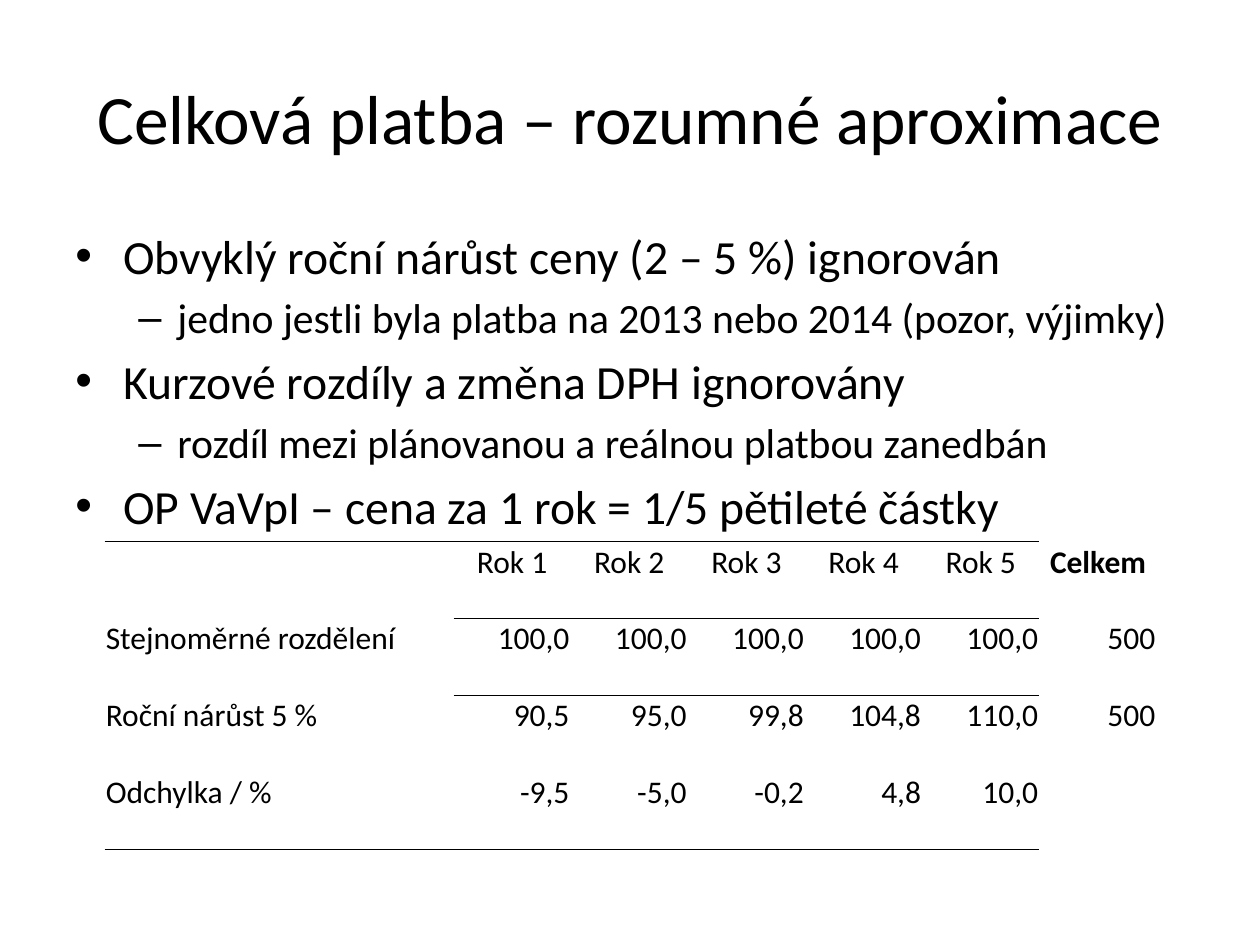
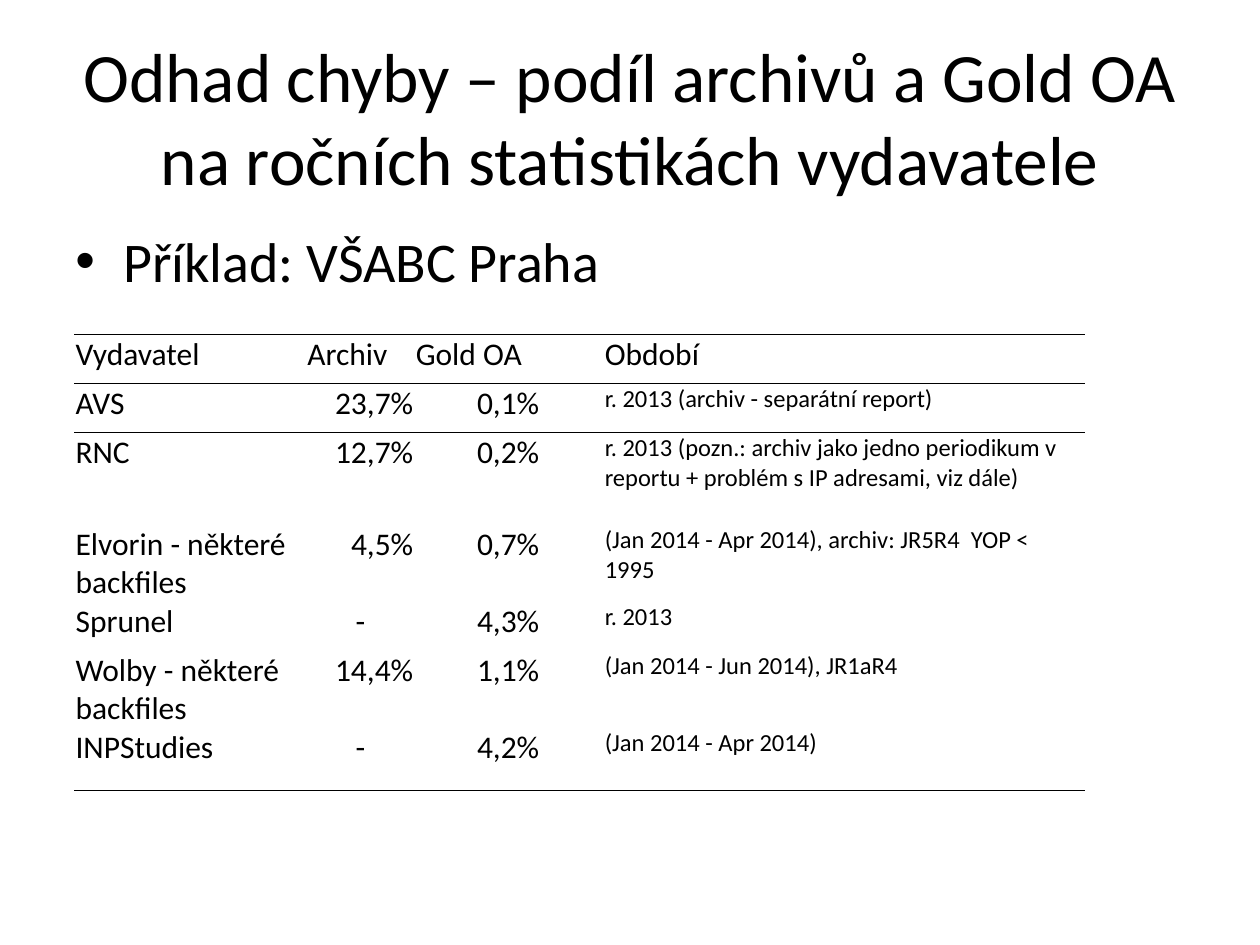
from lxml.etree import SubElement
from pptx import Presentation
from pptx.dml.color import RGBColor
from pptx.enum.text import MSO_ANCHOR, MSO_AUTO_SIZE, PP_ALIGN
from pptx.oxml import parse_xml
from pptx.oxml.ns import nsdecls, qn
from pptx.util import Inches, Pt

BLACK = RGBColor(0, 0, 0)
FONT = "Calibri"
WIDTH, HEIGHT = 10, 7.5
MARGIN = WIDTH / 20
CONTENT_WIDTH = WIDTH - 2 * MARGIN
TITLE_TOP, TITLE_HEIGHT = 0.3, HEIGHT / 6
BODY_TOP = 1.75
CELL_INSET = 0.01
RULE_WIDTH = 0.5
NUMBER_CHARACTERS = "-0123456789,%"
NO_GRID_STYLE = "{2D5ABB26-0587-4C30-8999-92F81FD0307C}"
BULLETS = [("•", 0.38, 0.38), ("–", 0.81, 0.31)]

SLIDES = [
    {
        "title": "Celková platba – rozumné aproximace",
        "body_height": 2.31,
        "bullet_sizes": (27.2, 23.8),
        "bullets": [
            (0, "Obvyklý roční nárůst ceny (2 – 5 %) ignorován"),
            (1, "jedno jestli byla platba na 2013 nebo 2014 (pozor, výjimky)"),
            (0, "Kurzové rozdíly a změna DPH ignorovány"),
            (1, "rozdíl mezi plánovanou a reálnou platbou zanedbán"),
            (0, "OP VaVpI – cena za 1 rok = 1/5 pětileté částky"),
        ],
        "table": {
            "corner": (0.83, 4.3),
            "columns": [2.77] + [0.93] * 6,
            "heights": [0.61] * 4,
            "header_align": PP_ALIGN.CENTER,
            "bold": {"Celkem"},
            "note_column": None,
            "rules": {0: range(6), 1: range(1, 6), 4: range(6)},
            "rows": [
                ("", "Rok 1", "Rok 2", "Rok 3", "Rok 4", "Rok 5", "Celkem"),
                ("Stejnoměrné rozdělení", "100,0", "100,0", "100,0", "100,0", "100,0", "500"),
                ("Roční nárůst 5 %", "90,5", "95,0", "99,8", "104,8", "110,0", "500"),
                ("Odchylka / %", "-9,5", "-5,0", "-0,2", "4,8", "10,0", ""),
            ],
        },
    },
    {
        "title": "Odhad chyby – podíl archivů a Gold OA na ročních statistikách vydavatele",
        "body_height": 4.95,
        "bullet_sizes": (32, 28),
        "bullets": [(0, "Příklad: VŠABC Praha")],
        "table": {
            "corner": (0.59, 2.65),
            "columns": [1.84, 0.86, 1, 4.32],
            "heights": [0.39, 0.39, 0.73, 0.39, 0.39, 0.39, 0.5],
            "header_align": PP_ALIGN.LEFT,
            "bold": set(),
            "note_column": 3,
            "rules": {0: range(4), 1: range(4), 7: range(4)},
            "rows": [
                ("Vydavatel", "Archiv", "Gold OA", "Období"),
                ("AVS", "23,7%", "0,1%", "r. 2013 (archiv - separátní report)"),
                ("RNC", "12,7%", "0,2%",
                 "r. 2013 (pozn.: archiv jako jedno periodikum v reportu"
                 " + problém s IP adresami, viz dále)"),
                ("Elvorin - některé backfiles", "4,5%", "0,7%",
                 "(Jan 2014 - Apr 2014), archiv: JR5R4  YOP < 1995"),
                ("Sprunel", "-", "4,3%", "r. 2013"),
                ("Wolby - některé backfiles", "14,4%", "1,1%", "(Jan 2014 - Jun 2014), JR1aR4"),
                ("INPStudies", "-", "4,2%", "(Jan 2014 - Apr 2014)"),
            ],
        },
    },
]


def write(para, text, size=18, bold=False, align=PP_ALIGN.LEFT, level=0,
          left=0, hanging=0, bullet=None, space_before=0):
    para.alignment = align
    para.level = level
    para.space_before = Pt(space_before)
    properties = para._p.get_or_add_pPr()
    properties.set("marL", str(Inches(left)))
    properties.set("indent", str(-Inches(hanging)))
    if bullet:
        SubElement(properties, qn("a:buFont")).set("typeface", "Arial")
        SubElement(properties, qn("a:buChar")).set("char", bullet)
    span = para.add_run()
    span.text = text
    span.font.name = FONT
    span.font.size = Pt(size)
    span.font.bold = bold
    span.font.color.rgb = BLACK


def add_title(page, text):
    title = page.shapes.title
    title.left, title.top = Inches(MARGIN), Inches(TITLE_TOP)
    title.width, title.height = Inches(CONTENT_WIDTH), Inches(TITLE_HEIGHT)
    frame = title.text_frame
    frame.vertical_anchor = MSO_ANCHOR.MIDDLE
    frame.auto_size = MSO_AUTO_SIZE.NONE
    write(frame.paragraphs[0], text, size=39.6, align=PP_ALIGN.CENTER)


def add_bullets(page, bullets, sizes, height):
    box = page.shapes.add_textbox(Inches(MARGIN), Inches(BODY_TOP),
                                  Inches(CONTENT_WIDTH), Inches(height))
    frame = box.text_frame
    frame.word_wrap = True
    for index, (level, text) in enumerate(bullets):
        para = frame.add_paragraph() if index else frame.paragraphs[0]
        mark, left, hanging = BULLETS[level]
        write(para, text, size=sizes[level], level=level, left=left, hanging=hanging,
              bullet=mark, space_before=0.2 * sizes[level])


def draw_rule(cell, side):
    cell._tc.get_or_add_tcPr().insert(0, parse_xml(
        f'<a:ln{side} {nsdecls("a")} w="{Pt(RULE_WIDTH)}"><a:solidFill>'
        f'<a:srgbClr val="{BLACK}"/></a:solidFill></a:ln{side}>'))


def cell_align(text, row, header_align):
    if row == 0:
        return header_align
    if text == "-":
        return PP_ALIGN.CENTER
    return PP_ALIGN.LEFT if text.strip(NUMBER_CHARACTERS) else PP_ALIGN.RIGHT


def fill_cell(cell, text, row, column, content):
    cell.fill.background()
    for side, line in (("B", row + 1), ("T", row)):
        if column in content["rules"].get(line, ()):
            draw_rule(cell, side)
    if not text:
        return
    cell.margin_left = cell.margin_right = cell.margin_top = Inches(CELL_INSET)
    cell.margin_bottom = 0
    note = column == content["note_column"]
    write(cell.text_frame.paragraphs[0], text,
          size=14 if note and row else 18, bold=text in content["bold"],
          align=cell_align(text, row, content["header_align"]),
          level=int(note), left=0.5 if note else 0)


def add_data_table(page, content):
    rows, columns, heights = content["rows"], content["columns"], content["heights"]
    left, top = content["corner"]
    table = page.shapes.add_table(len(rows), len(columns), Inches(left), Inches(top),
                                  Inches(sum(columns)), Inches(sum(heights))).table
    table.first_row = table.horz_banding = False
    table._tbl.tblPr.find(qn("a:tableStyleId")).text = NO_GRID_STYLE
    for column, width in zip(table.columns, columns):
        column.width = Inches(width)
    for row, height in zip(table.rows, heights):
        row.height = Inches(height)
    for row, texts in enumerate(rows):
        for column, text in enumerate(texts):
            fill_cell(table.cell(row, column), text, row, column, content)


def main():
    deck = Presentation()
    deck.slide_width, deck.slide_height = Inches(WIDTH), Inches(HEIGHT)
    for content in SLIDES:
        page = deck.slides.add_slide(deck.slide_layouts[5])
        add_title(page, content["title"])
        add_bullets(page, content["bullets"], content["bullet_sizes"], content["body_height"])
        add_data_table(page, content["table"])
    deck.save("out.pptx")


if __name__ == "__main__":
    main()
